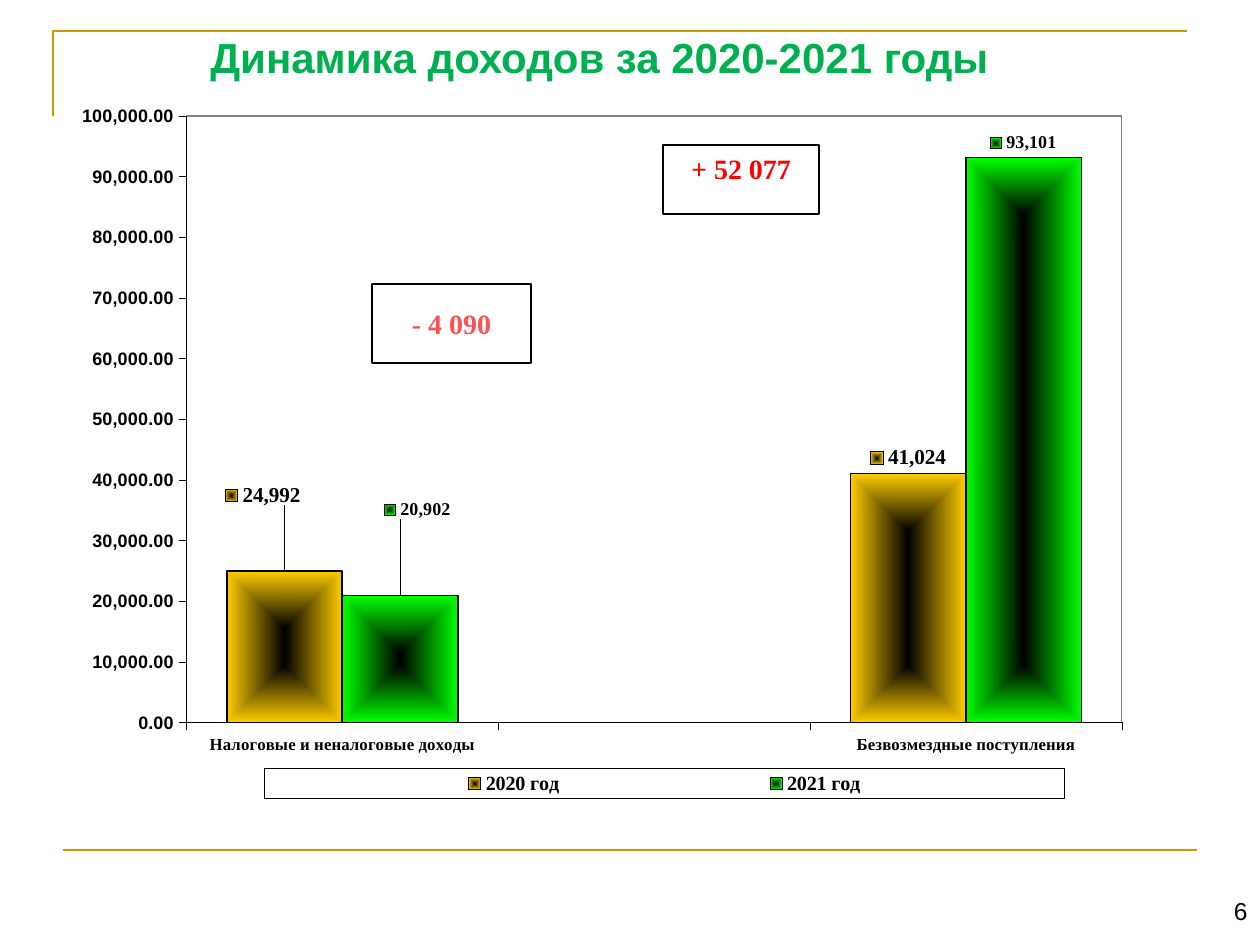
from lxml.etree import SubElement
from pptx import Presentation
from pptx.chart.data import CategoryChartData
from pptx.dml.color import RGBColor
from pptx.enum.chart import XL_CHART_TYPE as ChartType, XL_LABEL_POSITION as LabelPos
from pptx.enum.chart import XL_LEGEND_POSITION as LegendPos, XL_TICK_MARK as Tick
from pptx.enum.text import MSO_ANCHOR as Anchor, PP_ALIGN as Align
from pptx.oxml import parse_xml
from pptx.oxml.ns import nsdecls, qn
from pptx.util import Pt

SCALE = 914400 / 126
SERIF = "Times New Roman"


def px(*lengths):
    return [round(length * SCALE) for length in lengths]


def style(font, size, color="000000", name=SERIF, bold=True):
    font.size, font.name, font.bold = Pt(size), name, bold
    font.color.rgb = RGBColor.from_string(color)


deck = Presentation()
deck.slide_width, deck.slide_height = px(1260, 945)
page = deck.slides.add_slide(deck.slide_layouts[5])
shapes = page.shapes

# Gold frame lines
builder = shapes.build_freeform(53, 116, scale=SCALE)
builder.add_line_segments([(53, 31), (1187, 31)], close=False)
corner = builder.convert_to_shape()
corner.fill.background()
corner.shadow.inherit = False
rule = shapes.add_connector(1, *px(63, 850, 1197, 850))
SubElement(rule._element.spPr, qn("a:effectLst"))
for line in (corner.line, rule.line):
    line.color.rgb = RGBColor.from_string("CC9900")
    line.width = Pt(1.5)

# Title
title = shapes.title
title.left, title.top, title.width, title.height = px(44, 35, 1111, 69)
title.text_frame.text = "Динамика доходов за 2020-2021 годы"
title.text_frame.vertical_anchor = Anchor.TOP
para = title.text_frame.paragraphs[0]
para.alignment, para.line_spacing = Align.CENTER, 0.8
style(para.runs[0].font, 24, "00B050", "Arial")

# Page number
number = shapes.add_textbox(*px(1186, 890, 74, 55)).text_frame
number.word_wrap = True
number.text = "6"
number.paragraphs[0].alignment = Align.RIGHT
style(number.paragraphs[0].runs[0].font, 14, name="Arial", bold=False)

# Chart of income by year
data = CategoryChartData(number_format="#,##0")
data.categories = ["Налоговые и неналоговые доходы", "", "Безвозмездные поступления"]
data.add_series("2020 год", [24992, None, 41024])
data.add_series("2021 год", [20902, None, 93101])
chart = shapes.add_chart(ChartType.COLUMN_CLUSTERED, *px(82, 102, 1041, 731), data).chart
chart.has_title = False
style(chart.font, 7.2, name="Arial", bold=False)
plot = chart.plots[0]
plot.gap_width, plot.overlap, plot.vary_by_categories = 70, 0, False

# Axes
values, categories = chart.value_axis, chart.category_axis
values.minimum_scale, values.maximum_scale, values.major_unit = 0, 100000, 10000
values.has_major_gridlines = False
values.tick_labels.number_format = "#,##0.00"
values.tick_labels.number_format_is_linked = False
style(values.tick_labels.font, 10.3, name="Arial")
style(categories.tick_labels.font, 9.6)
for axis in (values, categories):
    axis.major_tick_mark, axis.minor_tick_mark = Tick.OUTSIDE, Tick.NONE
    axis.format.line.color.rgb = RGBColor.from_string("000000")
    axis.format.line.width = Pt(0.25)

# Columns: fill colour, label size, shift of the first label
looks = [("FFCC00", 12.1, (-0.021, -0.082)), ("00FF00", 10.3, (0.017, -0.098))]
for series, (color, size, (shift_x, shift_y)) in zip(plot.series, looks):
    series.invert_if_negative = False
    series.format.line.color.rgb = RGBColor.from_string("000000")
    series.format.line.width = Pt(0.9)
    series._element.spPr.insert(0, parse_xml(
        f'<a:gradFill {nsdecls("a")} rotWithShape="0"><a:gsLst>'
        '<a:gs pos="0"><a:srgbClr val="000000"/></a:gs>'
        f'<a:gs pos="100000"><a:srgbClr val="{color}"/></a:gs></a:gsLst>'
        '<a:path path="rect"><a:fillToRect l="50000" t="50000" r="50000" b="50000"/>'
        '</a:path></a:gradFill>'))
    labels = series.data_labels
    labels.show_value = labels.show_legend_key = True
    labels.number_format, labels.number_format_is_linked = "#,##0", False
    labels.position = LabelPos.OUTSIDE_END
    style(labels.font, size)
    first = series.points[0].data_label
    style(first.font, size)
    first.position = LabelPos.OUTSIDE_END
    label = series._element.find(".//" + qn("c:dLbl"))
    label.find(qn("c:showLegendKey")).set("val", "1")
    label.insert(1, parse_xml(
        f'<c:layout {nsdecls("c")}><c:manualLayout><c:x val="{shift_x}"/>'
        f'<c:y val="{shift_y}"/></c:manualLayout></c:layout>'))

# Legend, and the places and borders of legend and plot area
chart.has_legend = True
legend = chart.legend
legend.position, legend.include_in_layout = LegendPos.RIGHT, False
style(legend.font, 11.5)
plot_area = chart._chartSpace.chart.plotArea
parts = [(plot_area, "inner", (0.1, 0.019, 0.899, 0.83), "808080"),
         (legend._element, None, (0.175, 0.912, 0.769, 0.041), "000000")]
for part, target, place, color in parts:
    for old in part.findall(qn("c:layout")):
        part.remove(old)
    inner = f'<c:layoutTarget val="{target}"/>' if target else ""
    edges = "".join(f'<c:{key}Mode val="edge"/>' for key in "xy")
    sizes = "".join(f'<c:{key} val="{value}"/>' for key, value in zip("xywh", place))
    layout = parse_xml(f'<c:layout {nsdecls("c")}><c:manualLayout>{inner}{edges}{sizes}'
                       '</c:manualLayout></c:layout>')
    border = parse_xml(f'<c:spPr {nsdecls("c", "a")}><a:noFill/><a:ln w="9525"><a:solidFill>'
                       f'<a:srgbClr val="{color}"/></a:solidFill></a:ln></c:spPr>')
    if part is plot_area:
        part.insert(0, layout)
        part.append(border)
    else:
        part.find(qn("c:legendPos")).addnext(layout)
        part.find(qn("c:txPr")).addprevious(border)

# Boxes with the change per category
changes = [("- 4 090", (372, 284, 159, 79), "FF5050", Anchor.MIDDLE),
           ("+ 52 077", (663, 145, 156, 69), "FF0000", Anchor.TOP)]
for text, place, color, anchor in changes:
    box = shapes.add_shape(1, *px(*place))
    box.shadow.inherit = False
    box.fill.solid()
    box.fill.fore_color.rgb = RGBColor.from_string("FFFFFF")
    box.line.color.rgb = RGBColor.from_string("000000")
    box.line.width = Pt(0.75)
    frame = box.text_frame
    frame.word_wrap, frame.vertical_anchor = False, anchor
    frame.text = text
    frame.paragraphs[0].alignment = Align.CENTER
    style(frame.paragraphs[0].runs[0].font, 16, color)

deck.save("out.pptx")
